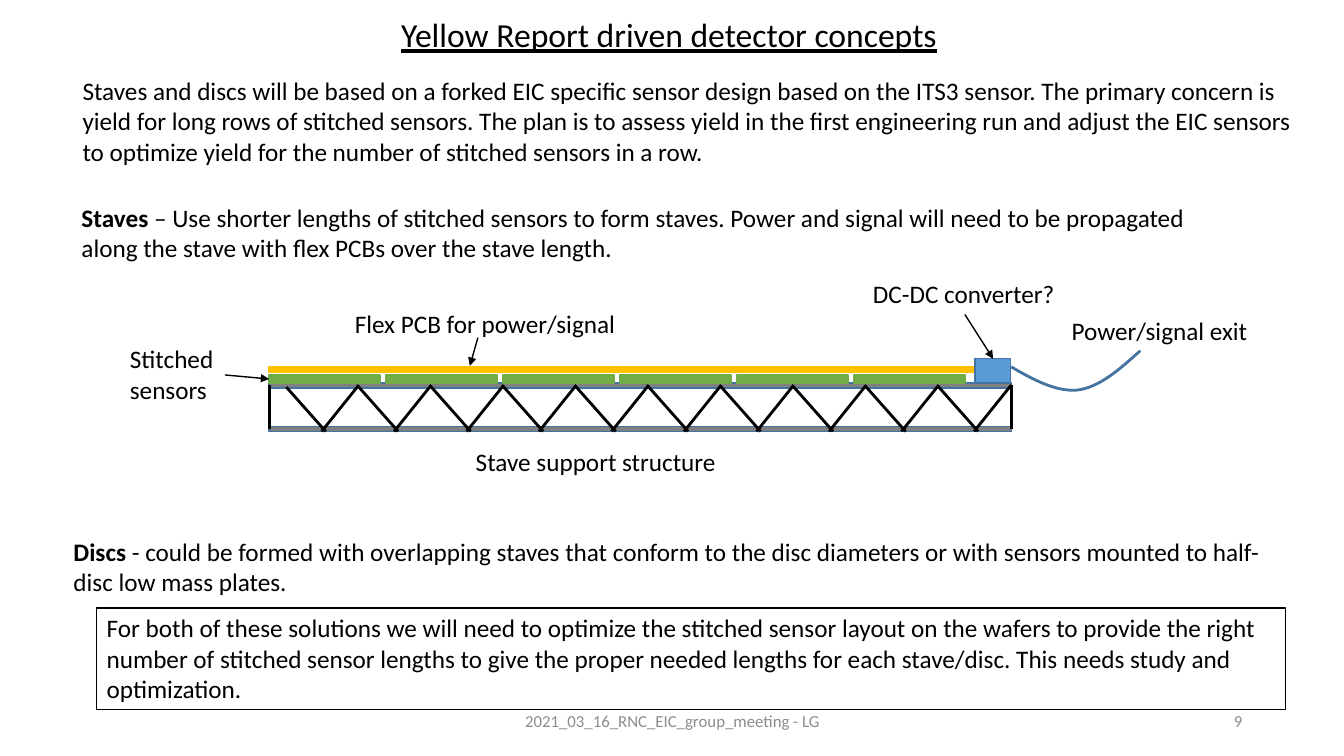
from lxml import etree
from pptx import Presentation, util as u
from pptx.dml.color import RGBColor
from pptx.enum import shapes, text
from pptx.oxml.ns import qn

HUES = {"ink": "000000", "dim": "8C8C8C", "steel": "808080", "edge": "43739E",
        "green": "70AD47", "gold": "FFC000", "blue": "5B9BD5"}
ALIGN = {"left": text.PP_ALIGN.LEFT, "mid": text.PP_ALIGN.CENTER, "right": text.PP_ALIGN.RIGHT}


def hue(name):
    """Return the named colour."""
    return RGBColor.from_string(HUES[name])


def span(*sizes):
    """Turn inch values into lengths."""
    return [u.Inches(size) for size in sizes]


def write(shape, paras, wrap=True, size=18, side="left", mid=False, **style):
    """Fill a shape with paragraphs of (words, bold) runs."""
    frame = shape.text_frame
    anchor = text.MSO_ANCHOR.MIDDLE if mid else text.MSO_ANCHOR.TOP
    for key, val in {"word_wrap": wrap, "vertical_anchor": anchor}.items():
        setattr(frame, key, val)
    for num, runs in enumerate(paras):
        para = frame.add_paragraph() if num else frame.paragraphs[0]
        para.alignment = ALIGN[side]
        for words, bold in runs:
            run = para.add_run()
            run.text = words
            form = {"name": "Calibri", "size": u.Pt(size), "bold": bold, **style}
            for key, val in form.items():
                setattr(run.font, key, val)
            run.font.color.rgb = hue("dim" if size == 12 else "ink")


def label(slide, box, *lines, **style):
    """Add a text box with one paragraph per line."""
    paras = [[(line, False)] if isinstance(line, str) else line for line in lines]
    write(slide.shapes.add_textbox(*span(*box)), paras, **style)


def block(slide, box, fill, edge):
    """Add a plain outlined rectangle."""
    shape = slide.shapes.add_shape(shapes.MSO_SHAPE.RECTANGLE, *span(*box))
    shape.shadow.inherit = False
    if fill:
        shape.fill.solid()
        shape.fill.fore_color.rgb = hue(fill)
    else:
        shape.fill.background()
    shape.line.color.rgb = hue(edge)
    shape.line.width = u.Pt(1)
    return shape


def rod(slide, start, end, width=2, arrow=False):
    """Draw a straight line, with an arrowhead if asked."""
    link = slide.shapes.add_connector(shapes.MSO_CONNECTOR.STRAIGHT, *span(*start, *end))
    link.line.color.rgb = hue("ink")
    link.line.width = u.Pt(width)
    if arrow:
        etree.SubElement(link.line._get_or_add_ln(), qn("a:tailEnd"), type="triangle")
    etree.SubElement(link._element.spPr, qn("a:effectLst"))


def truss(slide, box):
    """Draw the support: two chords, end posts and ten V braces."""
    left, top, wide, high = box
    for y in (top, top + high - 0.05):
        block(slide, (left, y, wide, 0.05), "steel", "edge")
    for x in (left, left + wide):
        rod(slide, (x, top + 0.02), (x, top + high - 0.02))
    count, first = 10, left + 0.17
    pitch = (left + wide - first) / count
    for num in range(count):
        x = first + num * pitch
        rod(slide, (x + pitch, top + 0.02), (x + 0.35, top + high))
        rod(slide, (x, top + 0.04), (x + 0.39, top + high))


def layers(slide, box):
    """Lay the stitched sensors, the flex and the converter."""
    left, top, wide, high = box
    for num in range(6):
        block(slide, (left + num * 1.16, top + 0.16, 1.1, 0.08), "green", "green")
    block(slide, (left, top + 0.08, wide - 0.02, 0.05), "gold", "gold")
    block(slide, (left + wide - 0.36, top, 0.35, high), "blue", "edge")


def cable(slide, box):
    """Draw the curved exit cable."""
    left, top, wide, high = box
    knots = [(0, 0.16), (0.22, 0.29), (0.45, 0.41), (0.66, high),
             (0.88, 0.36), (1.08, 0.18), (wide, 0)]
    dots = []
    for base in (0, 3):
        for num in range(17):
            t = num / 16
            mix = ((1 - t) ** 3, 3 * t * (1 - t) ** 2, 3 * t * t * (1 - t), t ** 3)
            x, y = [sum(m * k[axis] for m, k in zip(mix, knots[base:base + 4]))
                    for axis in (0, 1)]
            dots.append(span(left + x, top + y))
    form = slide.shapes.build_freeform(*dots[0])
    form.add_line_segments(dots[1:], close=False)
    curve = form.convert_to_shape()
    curve.shadow.inherit = False
    curve.fill.background()
    curve.line.color.rgb = hue("edge")
    curve.line.width = u.Pt(2)


def notes(slide, box):
    """Name the stave parts and point at them."""
    left, top = box[:2]
    for x, y, wide, high, lines in [
            (2.23, 0.3, 2.81, 0.4, ["Flex PCB for power/signal"]),
            (0, 0.65, 1.04, 0.71, ["Stitched", "sensors"]),
            (3.43, 1.67, 2.61, 0.4, ["Stave support structure"]),
            (9.34, 0.37, 1.96, 0.4, ["Power/signal exit"]),
            (7.37, 0, 2.02, 0.4, ["DC-DC converter?"])]:
        label(slide, (left + x, top + y, wide, high), *lines, wrap=False)
    for x, y, to_x, to_y in [(8.38, 0.41, 8.66, 0.85), (3.55, 0.64, 3.47, 0.92),
                             (1.04, 1.01, 1.48, 1.05)]:
        rod(slide, (left + x, top + y), (left + to_x, top + to_y), 1, True)


def stave(slide, box):
    """Draw the whole labelled stave."""
    left, top = box[:2]
    truss(slide, (left + 1.48, top + 1.09, 7.36, 0.48))
    layers(slide, (left + 1.48, top + 0.85, 7.36, 0.24))
    cable(slide, (left + 8.84, top + 0.77, 1.28, 0.39))
    notes(slide, box)


def prose(slide, box):
    """Place the title and the body text."""
    left, top = box[:2]
    label(slide, (left + 3.25, top, 5.57, 0.5), "Yellow Report driven detector concepts",
          wrap=False, size=24, underline=True)
    label(slide, (left + 0.09, top + 0.61, 12.28, 1.01),
          "Staves and discs will be based on a forked EIC specific sensor design based on the "
          "ITS3 sensor. The primary concern is yield for long rows of stitched sensors. The plan "
          "is to assess yield in the first engineering run and adjust the EIC sensors to optimize "
          "yield for the number of stitched sensors in a row.")
    label(slide, (left + 0.08, top + 1.87, 11.7, 0.71), [
        ("Staves", True),
        (" – Use shorter lengths of stitched sensors to form staves. Power and signal will need "
         "to be propagated along the stave with flex PCBs over the stave length.", False)])
    label(slide, (left, top + 5.18, 12.35, 1.01), [
        ("Discs", True),
        (" - could be formed with overlapping staves that conform to the disc diameters or with "
         "sensors mounted to half-disc low mass plates.", False)])
    frame = block(slide, (left + 0.33, top + 5.94, 11.79, 1.01), None, "ink")
    write(frame, [[(
        "For both of these solutions we will need to optimize the stitched sensor layout on the "
        "wafers to provide the right number of stitched sensor lengths to give the proper needed "
        "lengths for each stave/disc. This needs study and optimization.", False)]])


def footer(slide, box):
    """Place the meeting name and the page number."""
    left, top, wide, high = box
    label(slide, (left, top, 4.5, high), "2021_03_16_RNC_EIC_group_meeting - LG",
          size=12, side="mid", mid=True)
    label(slide, (left + wide - 3, top, 3, high), "9", size=12, side="right", mid=True)


def main():
    """Build and save the slide."""
    deck = Presentation()
    deck.slide_width, deck.slide_height = span(13.33, 7.5)
    slide = deck.slides.add_slide(deck.slide_layouts[6])
    prose(slide, (0.63, 0.09, 12.37, 6.95))
    stave(slide, (1.19, 2.71, 11.3, 2.07))
    footer(slide, (4.42, 6.95, 8, 0.4))
    deck.save("out.pptx")


if __name__ == "__main__":
    main()
